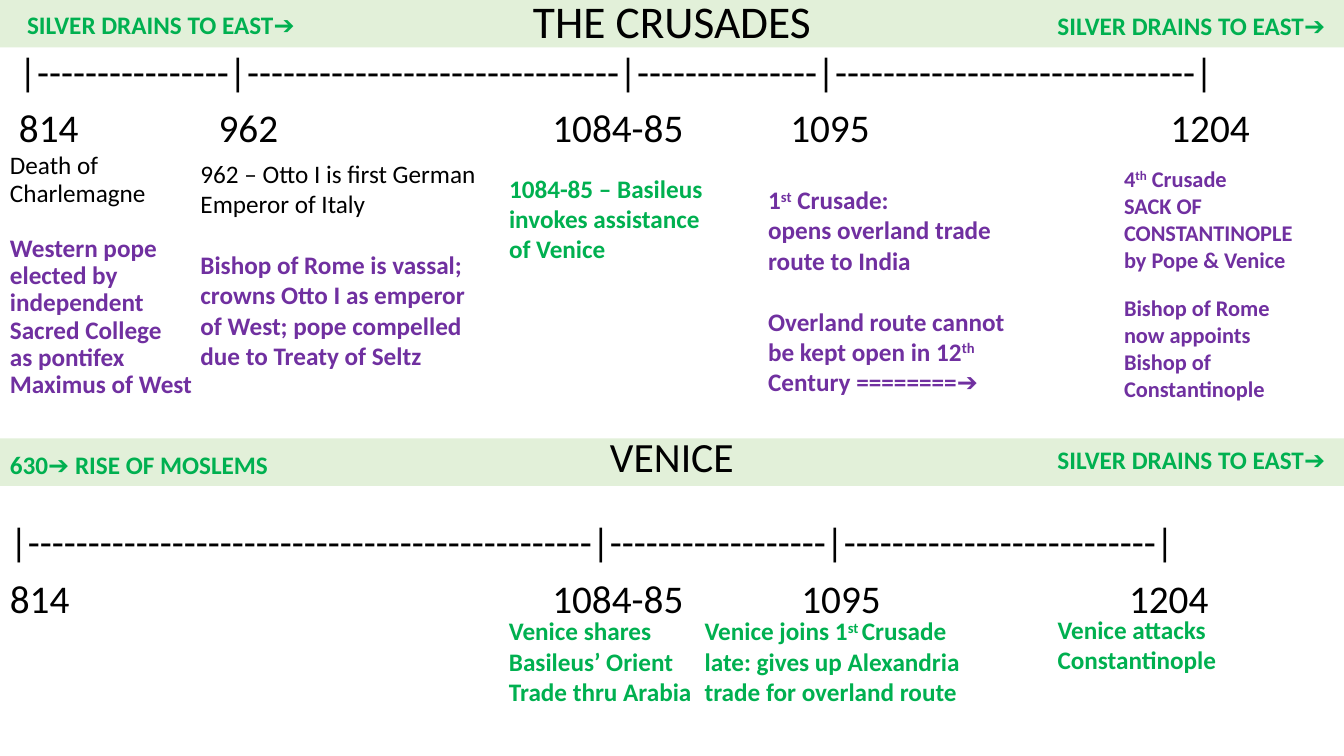
from lxml import etree
from pptx import Presentation
from pptx.dml.color import RGBColor
from pptx.enum.shapes import MSO_SHAPE
from pptx.enum.text import MSO_ANCHOR, MSO_AUTO_SIZE, PP_ALIGN
from pptx.oxml.ns import qn
from pptx.util import Emu, Pt

PX = 9144  # 100 px to the inch
WIDTH, HEIGHT = 1333, 750
BAND_HEIGHT = 47

BLACK = RGBColor(0x00, 0x00, 0x00)
PURPLE = RGBColor(0x70, 0x30, 0xA0)
GREEN = RGBColor(0x00, 0xB0, 0x50)
PALE_GREEN = RGBColor(0xE2, 0xF0, 0xD9)

RECTANGLE = MSO_SHAPE.RECTANGLE
MIDDLE = MSO_ANCHOR.MIDDLE
LEFT, CENTER = PP_ALIGN.LEFT, PP_ALIGN.CENTER
FIT_SHAPE, NO_FIT = MSO_AUTO_SIZE.SHAPE_TO_FIT_TEXT, MSO_AUTO_SIZE.NONE
TITLE_ONLY = 5


def px(n):
    return Emu(n * PX)


def write(p, text, size=18, color=BLACK, bold=False, align=LEFT, spacing=1.0, before=0):
    """Fill a paragraph; text between ^ marks is superscript."""
    p.alignment = align
    p.line_spacing = spacing
    p.space_before = Pt(before)
    for i, part in enumerate(text.split("^")):
        if not part:
            continue
        r = p.add_run()
        r.text = part
        font = r.font
        font.name, font.size, font.bold = "Calibri", Pt(size), bold
        font.color.rgb = color
        if i % 2:
            r._r.get_or_add_rPr().set("baseline", "30000")


class Deck:
    def __init__(self):
        self.prs = Presentation()
        self.prs.slide_width, self.prs.slide_height = px(WIDTH), px(HEIGHT)
        self.s = self.prs.slides.add_slide(self.prs.slide_layouts[TITLE_ONLY])

    def fill_band(self, sp, y, text, **style):
        sp.left, sp.top, sp.width, sp.height = px(0), px(y), px(WIDTH), px(BAND_HEIGHT)
        sp.fill.solid()
        sp.fill.fore_color.rgb = PALE_GREEN
        tf = sp.text_frame
        tf.word_wrap, tf.auto_size, tf.vertical_anchor = True, NO_FIT, MIDDLE
        write(tf.paragraphs[0], text, align=CENTER, **style)

    def title(self, text, **style):
        self.fill_band(self.s.shapes.title, 0, text, **style)

    def band(self, y, text, **style):
        sp = self.s.shapes.add_shape(RECTANGLE, px(0), px(y), px(WIDTH), px(BAND_HEIGHT))
        sp.shadow.inherit = False
        sp.line.fill.background()
        self.fill_band(sp, y, text, **style)

    def box(self, x, y, w, h, wrap=False):
        tf = self.s.shapes.add_textbox(px(x), px(y), px(w), px(h)).text_frame
        tf.word_wrap = wrap
        tf.auto_size = NO_FIT if wrap else FIT_SHAPE
        return tf

    def note(self, x, y, w, h, *groups, gap=22, **style):
        """Each group is a colour and its lines; a gap parts the groups."""
        tf = self.box(x, y, w, h)
        p = None
        for color, *lines in groups:
            for i, line in enumerate(lines):
                before = gap if p is not None and i == 0 else 0
                p = tf.paragraphs[0] if p is None else tf.add_paragraph()
                write(p, line, color=color, bold=color != BLACK, before=before, **style)

    def timeline(self, x, y, dashes, years, stops):
        tf = self.box(x, y, WIDTH - x, 112, wrap=True)
        axis = "|" + "".join("-" * n + "|" for n in dashes)
        write(tf.paragraphs[0], axis, size=28, spacing=0.9)
        p = tf.add_paragraph()
        write(p, "\t".join(years), size=28, spacing=0.9, before=10)
        tabs = etree.SubElement(p._p.get_or_add_pPr(), qn("a:tabLst"))
        for stop in stops:
            etree.SubElement(tabs, qn("a:tab"), pos=str(px(stop)), algn="l")


def main():
    deck = Deck()

    # Heading bands
    deck.title("THE CRUSADES", size=32.4, spacing=0.9)
    deck.band(435, "VENICE", size=29.7, spacing=0.7)
    for x, y in ((17, 4), (1039, 5), (1039, 436)):
        deck.note(x, y, 294, 40, (GREEN, "SILVER DRAINS TO EAST➔"))
    deck.note(0, 441, 285, 40, (GREEN, "630➔ RISE OF MOSLEMS"))

    # Timelines
    deck.timeline(9, 47, (16, 31, 15, 30),
                  ("814", "962", "1084-85", "1095", "1204"), (198, 529, 765, 1142))
    deck.timeline(0, 514, (47, 18, 26),
                  ("814", "1084-85", "1095", "1204"), (538, 785, 1110))

    # Events of the Crusades
    deck.note(0, 147, 201, 257,
              (BLACK, "Death of", "Charlemagne"),
              (PURPLE, "Western pope", "elected by", "independent",
               "Sacred College", "as pontifex", "Maximus of West"),
              gap=20, spacing=0.9)
    deck.note(189, 152, 297, 222,
              (BLACK, "962 – Otto I is first German", "Emperor of Italy"),
              (PURPLE, "Bishop of Rome is vassal;", "crowns Otto I as emperor",
               "of West; pope compelled", "due to Treaty of Seltz"))
    deck.note(495, 167, 221, 101,
              (GREEN, "1084-85 – Basileus", "invokes assistance", "of Venice"))
    deck.note(752, 178, 256, 222,
              (PURPLE, "1^st^ Crusade:", "opens overland trade", "route to India"),
              (PURPLE, "Overland route cannot", "be kept open in 12^th^",
               "Century ========➔"))
    deck.note(1105, 159, 189, 118,
              (PURPLE, "4^th^ Crusade", "SACK OF", "CONSTANTINOPLE",
               "by Pope & Venice"), size=16)
    deck.note(1105, 287, 167, 118,
              (PURPLE, "Bishop of Rome", "now appoints", "Bishop of",
               "Constantinople"), size=16)

    # Events of Venice
    deck.note(495, 606, 203, 101,
              (GREEN, "Venice shares", "Basileus’ Orient", "Trade thru Arabia"))
    deck.note(689, 606, 281, 101,
              (GREEN, "Venice joins 1^st ^Crusade", "late: gives up Alexandria",
               "trade for overland route"))
    deck.note(1039, 604, 179, 71, (GREEN, "Venice attacks", "Constantinople"))

    deck.prs.save("out.pptx")


if __name__ == "__main__":
    main()
